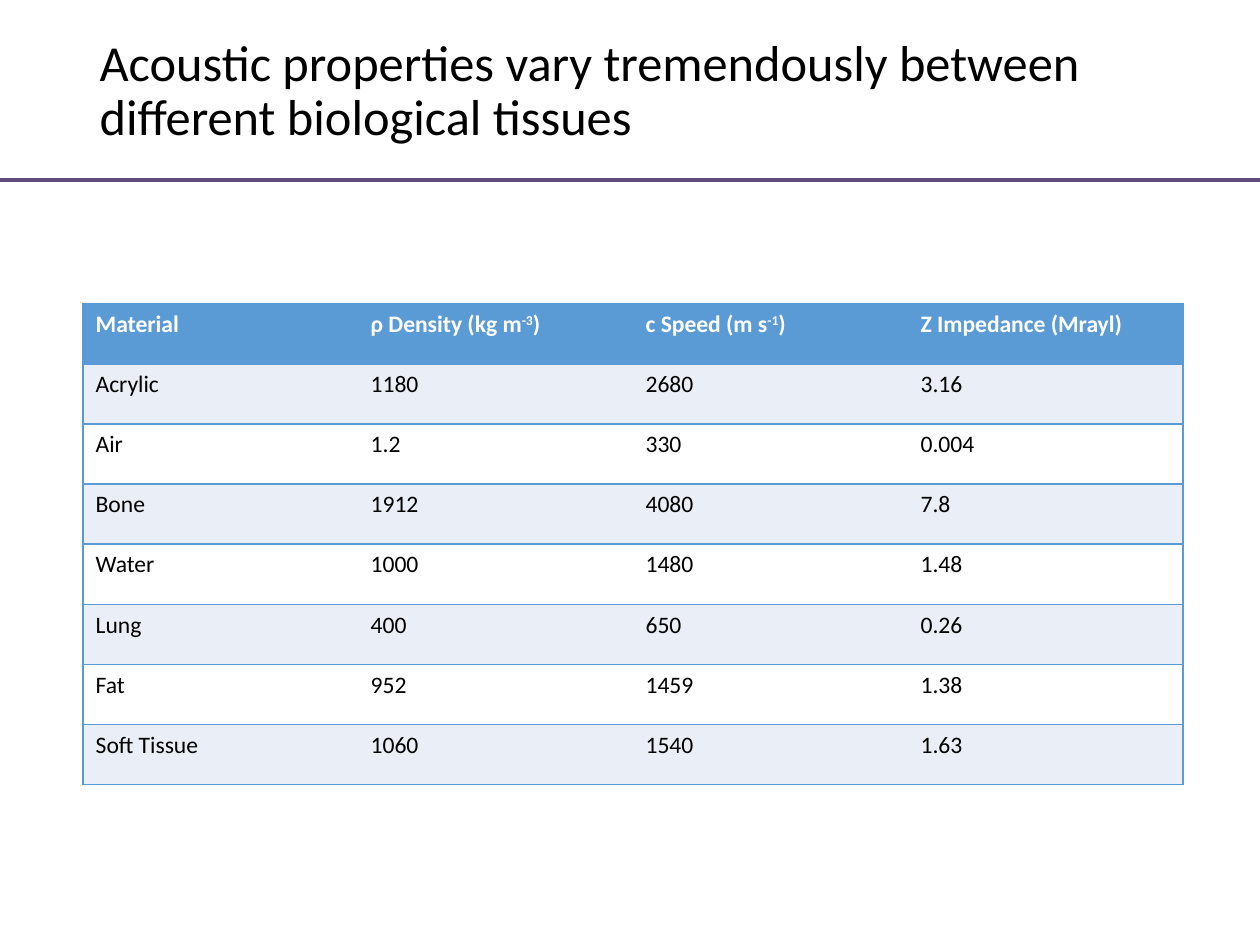
import dataclasses

import lxml.etree
import pptx
import pptx.dml.color
import pptx.enum.shapes
import pptx.enum.text
import pptx.oxml.ns
import pptx.util

Inches = pptx.util.Inches
Pt = pptx.util.Pt
qn = pptx.oxml.ns.qn


@dataclasses.dataclass(frozen=True)
class Theme:
    """Colours, font and type sizes of the slide."""
    font: str = "Calibri"
    text: str = "000000"
    white: str = "FFFFFF"
    header: str = "5B9BD5"
    band: str = "EAEFF7"
    rule: str = "604A7B"
    title_size: float = 28.8
    table_size: float = 13.5


THEME = Theme()
TITLE = "Acoustic properties vary tremendously between different biological tissues"
TISSUES = [
    ("Material", "ρ Density (kg m^-3^)", "c Speed (m s^-1^)", "Z Impedance (Mrayl)"),
    ("Acrylic", "1180", "2680", "3.16"),
    ("Air", "1.2", "330", "0.004"),
    ("Bone", "1912", "4080", "7.8"),
    ("Water", "1000", "1480", "1.48"),
    ("Lung", "400", "650", "0.26"),
    ("Fat", "952", "1459", "1.38"),
    ("Soft Tissue", "1060", "1540", "1.63"),
]


def rgb(value):
    """Return a colour object for a hex string."""
    return pptx.dml.color.RGBColor.from_string(value)


def write_text(tf, text, size, color=THEME.text, bold=False, spacing=1.0):
    """Fill a left-aligned paragraph, raising the parts between carets."""
    p = tf.paragraphs[0]
    p.alignment = pptx.enum.text.PP_ALIGN.LEFT
    p.line_spacing = spacing
    for i, part in enumerate(text.split("^")):
        r = p.add_run()
        r.text = part
        r.font.name = THEME.font
        r.font.size = Pt(size)
        r.font.bold = bold
        r.font.color.rgb = rgb(color)
        if i % 2:
            r.font._element.set("baseline", "30000")


def add_title(s, text):
    """Place and write the slide title."""
    sp = s.shapes.title
    sp.left, sp.top, sp.width, sp.height = map(Inches, (0.69, 0.22, 8.62, 1.02))
    tf = sp.text_frame
    tf.word_wrap = True
    tf.auto_size = pptx.enum.text.MSO_AUTO_SIZE.NONE
    tf.vertical_anchor = pptx.enum.text.MSO_ANCHOR.MIDDLE
    write_text(tf, text, THEME.title_size, spacing=0.9)


def add_rule(s, y):
    """Draw a rule across the whole slide."""
    sp = s.shapes.add_connector(
        pptx.enum.shapes.MSO_CONNECTOR.STRAIGHT, Inches(10), y, Inches(0), y)
    sp.line.color.rgb = rgb(THEME.rule)
    sp.line.width = Pt(2.25)
    lxml.etree.SubElement(sp._element.spPr, qn("a:effectLst"))


def set_borders(cell, sides, color):
    """Give the named cell sides a thin line and the others none."""
    tcPr = cell._tc.get_or_add_tcPr()
    for side in "LRTB":
        ln = lxml.etree.SubElement(tcPr, qn("a:ln" + side), w=str(Pt(1)))
        if side in sides:
            fill = lxml.etree.SubElement(ln, qn("a:solidFill"))
            lxml.etree.SubElement(fill, qn("a:srgbClr"), val=color)
        else:
            lxml.etree.SubElement(ln, qn("a:noFill"))


def add_data_table(s, rows, left, top, width, height):
    """Add a banded table with a header row and horizontal lines."""
    last = len(rows[0]) - 1
    table = s.shapes.add_table(len(rows), last + 1, left, top, width, height).table
    for i, row in enumerate(rows):
        header = i == 0
        fill = THEME.header if header else THEME.band if i % 2 else THEME.white
        for j, text in enumerate(row):
            cell = table.cell(i, j)
            sides = "TB" + ("L" if j == 0 else "") + ("R" if j == last else "")
            set_borders(cell, sides, THEME.header)
            cell.fill.solid()
            cell.fill.fore_color.rgb = rgb(fill)
            write_text(cell.text_frame, text, THEME.table_size, bold=header,
                       color=THEME.white if header else THEME.text)


def main():
    """Build and save the slide."""
    prs = pptx.Presentation()
    prs.slide_width, prs.slide_height = Inches(10), Inches(7.5)
    s = prs.slides.add_slide(prs.slide_layouts[5])
    add_title(s, TITLE)
    add_data_table(s, TISSUES, Inches(0.66), Inches(2.41), Inches(8.73), Inches(3.82))
    add_rule(s, Inches(1.43))
    prs.save("out.pptx")


if __name__ == "__main__":
    main()
